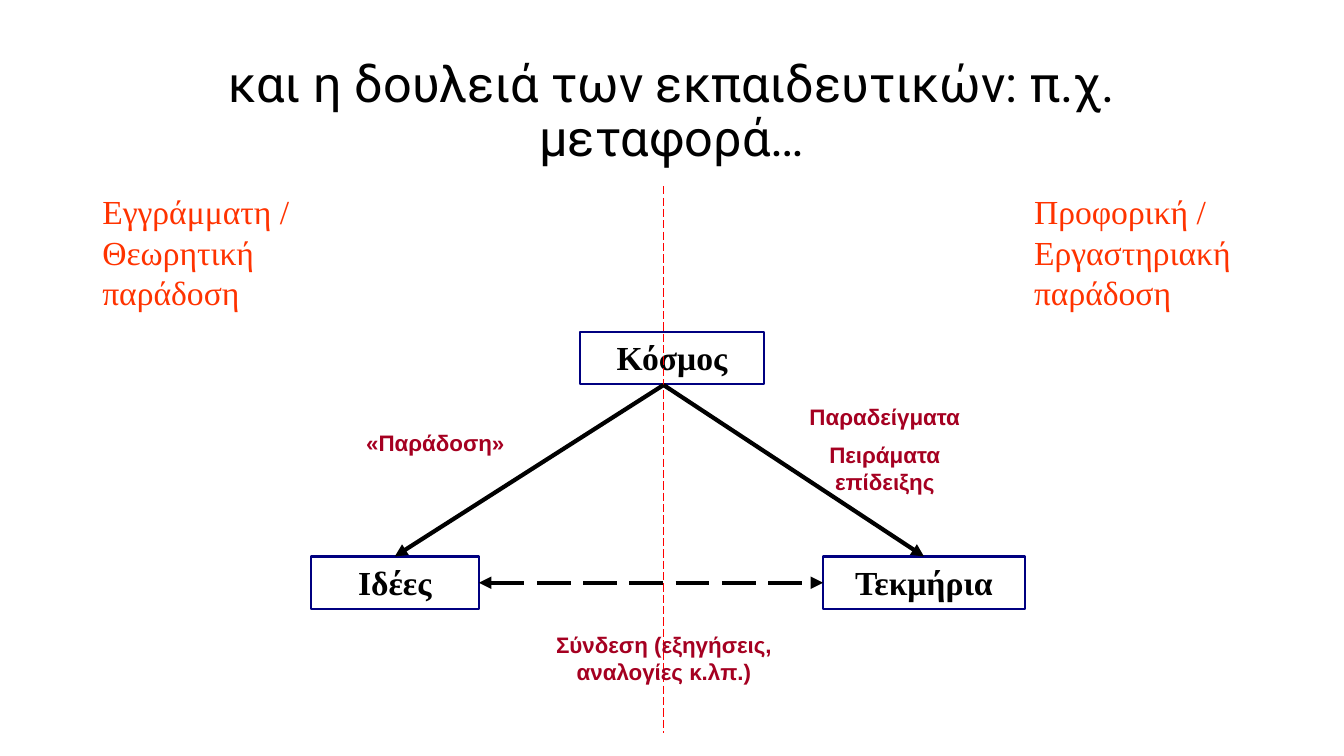
from pptx import Presentation
from pptx.dml.color import RGBColor
from pptx.enum import dml, shapes, text
from pptx.oxml.ns import qn
from pptx.util import Pt
from lxml import etree

BLACK = RGBColor(0, 0, 0)
NAVY = RGBColor(0, 0, 0x80)
RED = RGBColor(0xFF, 0, 0)
ORANGE = RGBColor(0xFF, 0x33, 0)
WINE = RGBColor(0xA5, 0, 0x21)
SERIF, SANS = "Times New Roman", "Arial"
MID = 474  # x of the dividing line
CENTER = text.PP_ALIGN.CENTER
LEFT = text.PP_ALIGN.LEFT


def write(frame, lines, font, size, color, bold=False, align=CENTER):
    """Fill a text frame, one paragraph per line."""
    frame.word_wrap = True
    for i, line in enumerate(lines):
        para = frame.add_paragraph() if i else frame.paragraphs[0]
        para.alignment = align
        if i:
            para.space_before = Pt(size / 2)
        run = para.add_run()
        run.text = line
        run.font.name = font
        run.font.size = Pt(size)
        run.font.bold = bold
        run.font.color.rgb = color


def add_title(slide, words):
    title = slide.shapes.title
    title.left, title.top, title.width, title.height = map(Pt, (66, 29, 828, 104))
    frame = title.text_frame
    write(frame, [words], "Roboto", 36, BLACK)
    frame.auto_size = text.MSO_AUTO_SIZE.NONE
    frame.vertical_anchor = text.MSO_ANCHOR.MIDDLE
    frame.paragraphs[0].line_spacing = 0.9


def add_box(slide, x, y, w, word):
    box = slide.shapes.add_shape(
        shapes.MSO_SHAPE.RECTANGLE, Pt(x), Pt(y), Pt(w), Pt(37.5))
    box.shadow.inherit = False
    box.fill.background()
    box.line.color.rgb = NAVY
    box.line.width = Pt(1.5)
    box.text_frame.vertical_anchor = text.MSO_ANCHOR.TOP
    write(box.text_frame, [word], SERIF, 24, BLACK, True)
    return box


def add_note(slide, x, y, w, h, lines, *style):
    note = slide.shapes.add_textbox(Pt(x), Pt(y), Pt(w), Pt(h))
    write(note.text_frame, lines, *style)


def add_line(slide, x1, y1, x2, y2, color, width, dash=False, heads=()):
    """Draw a line; heads lists its arrow ends, headEnd before tailEnd."""
    line = slide.shapes.add_connector(
        shapes.MSO_CONNECTOR.STRAIGHT, Pt(x1), Pt(y1), Pt(x2), Pt(y2))
    line.line.color.rgb = color
    line.line.width = Pt(width)
    if dash:
        line.line.dash_style = dml.MSO_LINE.LONG_DASH
    for head in heads:
        etree.SubElement(line.line._get_or_add_ln(), qn("a:" + head), type="triangle")
    etree.SubElement(line._element.spPr, qn("a:effectLst"))
    return line


def main():
    deck = Presentation()
    deck.slide_width, deck.slide_height = Pt(960), Pt(540)
    slide = deck.slides.add_slide(deck.slide_layouts[5])
    add_title(slide, "και η δουλειά των εκπαιδευτικών: π.χ. μεταφορά…")

    add_box(slide, 414, 237, 132, "Κόσμος")
    ideas = add_box(slide, 222, 397.5, 120, "Ιδέες")
    facts = add_box(slide, 588, 397.5, 144, "Τεκμήρια")
    add_line(slide, MID, 133, MID, 523.5, RED, 0.75, True)

    for x, w, words in ((66, 156, "Εγγράμματη / Θεωρητική παράδοση"),
                        (731.5, 162, "Προφορική / Εργαστηριακή παράδοση")):
        add_note(slide, x, 133, w, 94.5, [words], SERIF, 24, ORANGE, False, LEFT)

    for x, y, w, h, lines in (
            (566.5, 284.5, 131, 75, ["Παραδείγματα", "Πειράματα επίδειξης"]),
            (247, 303, 128, 26.5, ["«Παράδοση»"]),
            (389, 447, 170.5, 46, ["Σύνδεση (εξηγήσεις, αναλογίες κ.λπ.)"])):
        add_note(slide, x, y, w, h, lines, SANS, 16, WINE, True)

    for box, x in ((ideas, 282), (facts, 660)):
        arrow = add_line(slide, MID, 275, x, 397.5, BLACK, 3, heads=["tailEnd"])
        arrow.end_connect(box, 0)
    link = add_line(slide, 342, 416.25, 588, 416.25, BLACK, 3, True,
                    ["headEnd", "tailEnd"])
    link.begin_connect(ideas, 3)
    link.end_connect(facts, 1)
    deck.save("out.pptx")


if __name__ == "__main__":
    main()
